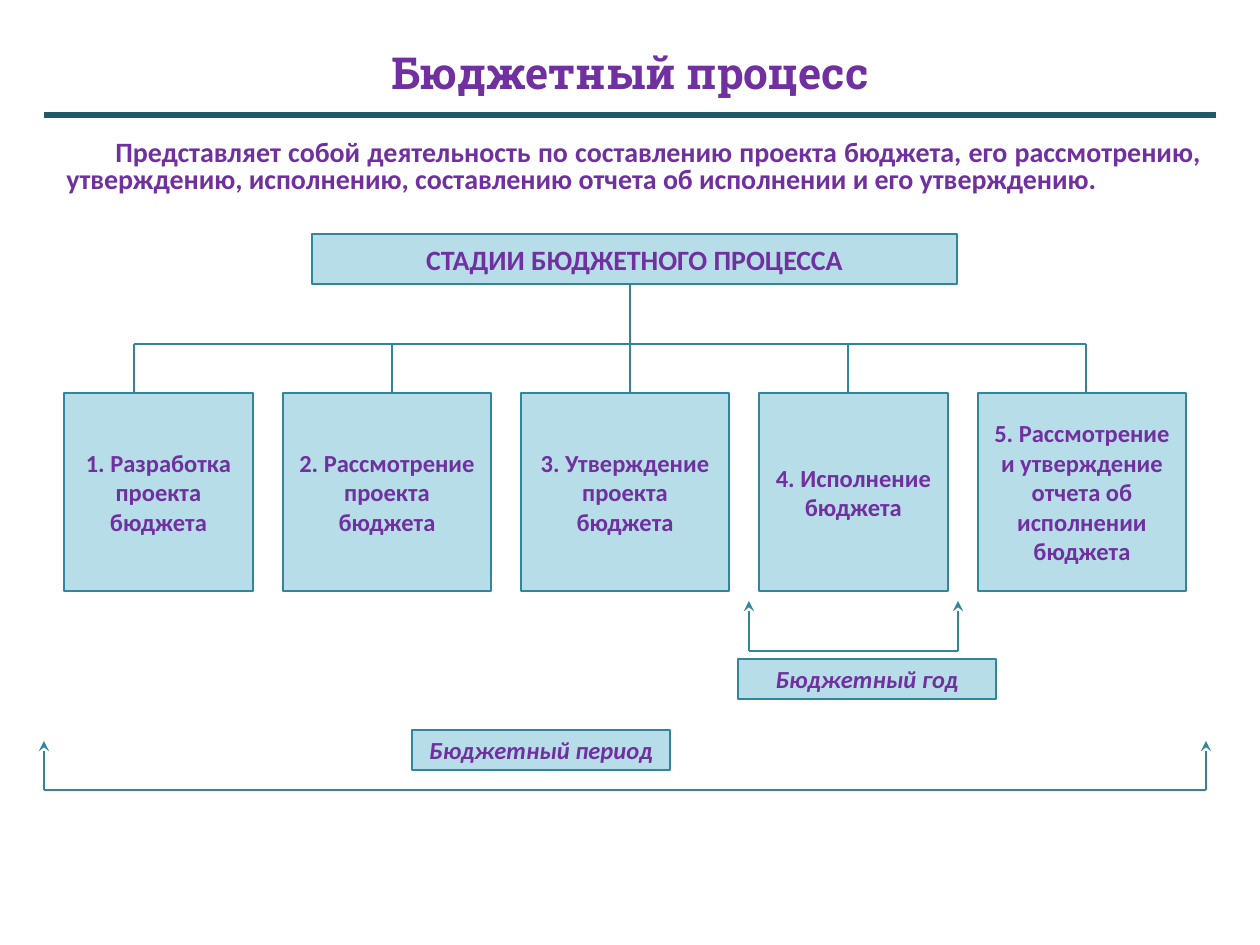
from lxml import etree
from pptx import Presentation
from pptx.dml.color import RGBColor
from pptx.enum.shapes import MSO_CONNECTOR, MSO_SHAPE
from pptx.enum.text import MSO_ANCHOR, PP_ALIGN
from pptx.oxml.ns import qn
from pptx.util import Emu, Pt

PX_PER_INCH = 126
COLORS = {
    "text": "7030A0",
    "fill": "B7DEE8",
    "line": "31859C",
    "rule": "215968",
}
RECT = MSO_SHAPE.RECTANGLE
STRAIGHT = MSO_CONNECTOR.STRAIGHT
MIDDLE = MSO_ANCHOR.MIDDLE
CENTER = PP_ALIGN.CENTER
JUSTIFY = PP_ALIGN.JUSTIFY

STAGES = [
    ("1. Разработка проекта бюджета", 189, 134),
    ("2. Рассмотрение проекта бюджета", 208, 392),
    ("3. Утверждение проекта бюджета", 208, 630),
    ("4. Исполнение бюджета", 189, 848),
    ("5. Рассмотрение и утверждение отчета об исполнении бюджета", 208, 1086),
]


def px(length):
    return Emu(round(length * 914400 / PX_PER_INCH))


def color(name):
    return RGBColor.from_string(COLORS[name])


def write(frame, text, size, font="Calibri", align=CENTER, italic=None):
    frame.text = text
    paragraph = frame.paragraphs[0]
    paragraph.alignment = align
    run_font = paragraph.runs[0].font
    run_font.name = font
    run_font.size = Pt(size)
    run_font.bold = True
    run_font.italic = italic
    run_font.color.rgb = color("text")
    return paragraph


def add_text(slide, box, text, size, **style):
    frame = slide.shapes.add_textbox(*map(px, box)).text_frame
    frame.word_wrap = True
    return frame, write(frame, text, size, **style)


def add_box(slide, box, text, size, italic=None, wrap=True):
    panel = slide.shapes.add_shape(RECT, *map(px, box))
    panel.shadow.inherit = False
    panel.fill.solid()
    panel.fill.fore_color.rgb = color("fill")
    panel.line.color.rgb = color("line")
    panel.line.width = Pt(1.25)
    panel.text_frame.word_wrap = wrap
    panel.text_frame.vertical_anchor = MIDDLE
    write(panel.text_frame, text, size, italic=italic)


def add_line(slide, x1, y1, x2, y2, tone="line", width=1.25, arrow=False):
    line = slide.shapes.add_connector(STRAIGHT, px(x1), px(y1), px(x2), px(y2))
    line.line.color.rgb = color(tone)
    line.line.width = Pt(width)
    if arrow:
        etree.SubElement(line.line._get_or_add_ln(), qn("a:tailEnd"), type="stealth")
    etree.SubElement(line._element.spPr, qn("a:effectLst"))


def add_header(slide, left, top, width, height):
    frame, _ = add_text(slide, (left + 19, top, width - 38, height),
                        "Бюджетный процесс", 25.2, font="Roboto Slab")
    frame.vertical_anchor = MIDDLE
    rule_y = top + height + 9
    add_line(slide, left, rule_y, left + width, rule_y, tone="rule", width=3.75)


def add_definition(slide, left, top, width, height):
    _, paragraph = add_text(
        slide, (left, top, width, height),
        "Представляет собой деятельность по составлению проекта бюджета, "
        "его рассмотрению, утверждению, исполнению, составлению отчета "
        "об исполнении и его утверждению.", 16, align=JUSTIFY)
    paragraph.line_spacing = 0.8
    paragraph._p.get_or_add_pPr().set("indent", str(px(49)))


def add_stages(slide, left, top, width, height):
    heading_bottom = top + 50
    branch_y = top + 110
    stage_top = top + 159
    add_box(slide, (left + 248, top, width - 477, 50), "СТАДИИ БЮДЖЕТНОГО ПРОЦЕССА", 16)

    stage_left = left
    for name, stage_width, stem_x in STAGES:
        add_box(slide, (stage_left, stage_top, stage_width, top + height - stage_top), name, 14)
        add_line(slide, stem_x, branch_y, stem_x, stage_top)
        stage_left += stage_width + 30

    stems = [stem_x for _, _, stem_x in STAGES]
    trunk_x = stems[len(stems) // 2]
    add_line(slide, trunk_x, heading_bottom, trunk_x, branch_y)
    add_line(slide, stems[0], branch_y, stems[-1], branch_y)


def add_span(slide, left, top, width, height, label, label_dx, label_dy):
    right, bottom = left + width, top + height
    add_line(slide, left, bottom, right, bottom)
    for x in (left, right):
        add_line(slide, x, bottom, x, top, arrow=True)
    add_box(slide, (left + label_dx, top + label_dy, 258, 40), label, 14,
            italic=True, wrap=False)


def main():
    deck = Presentation()
    deck.slide_width = px(1260)
    deck.slide_height = px(945)
    slide = deck.slides.add_slide(deck.slide_layouts[6])
    add_header(slide, 44, 38, 1172, 68)
    add_definition(slide, 54, 135, 1160, 91)
    add_stages(slide, 64, 234, 1122, 357)
    add_span(slide, 749, 601, 209, 50, "Бюджетный год", -11, 58)
    add_span(slide, 44, 741, 1162, 49, "Бюджетный период", 368, -11)
    deck.save("out.pptx")


if __name__ == "__main__":
    main()
